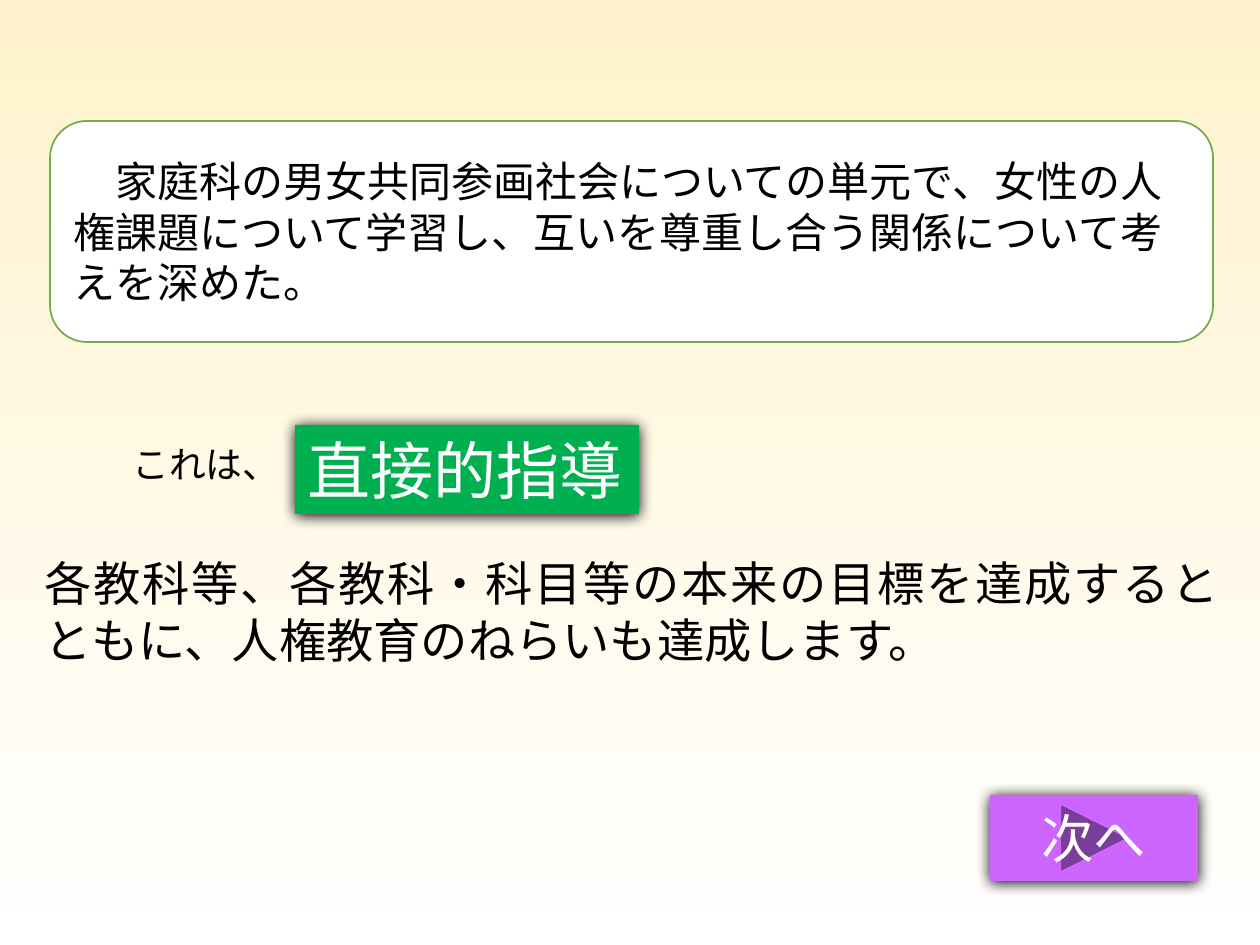
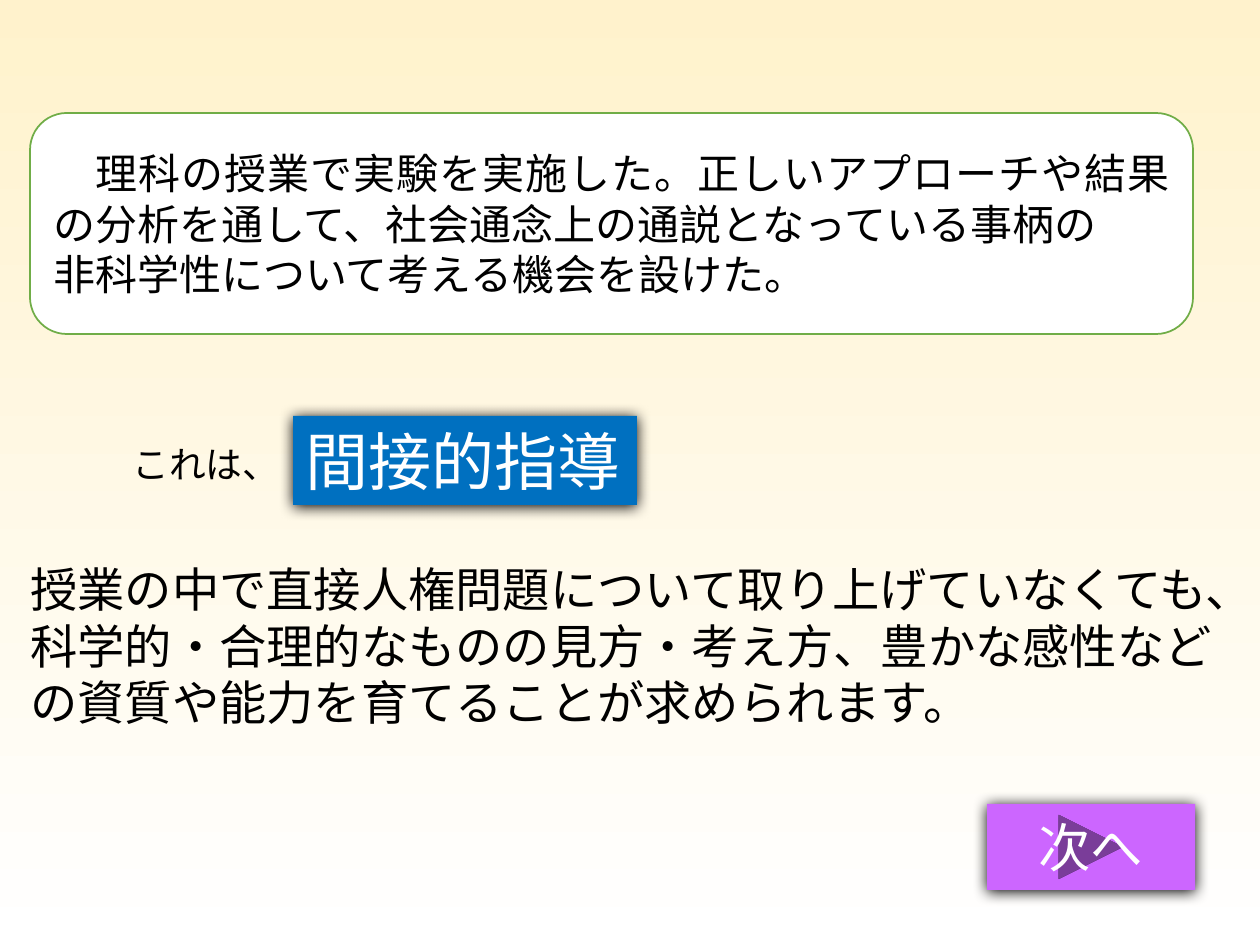
from lxml import etree
from pptx import Presentation
from pptx.dml.color import RGBColor
from pptx.enum.shapes import MSO_SHAPE
from pptx.enum.text import MSO_ANCHOR, MSO_AUTO_SIZE, PP_ALIGN
from pptx.oxml.ns import qn
from pptx.util import Pt

SCALE = 914400 / 126
FACE = "Noto Sans CJK JP"
SKY = ("FFF2CC", "FFFFFF")
BLACK, WHITE = "000000", "FFFFFF"
PURPLE, GREEN, BLUE, LEAF = "CC66FF", "00B050", "0070C0", "70AD47"
NEXT = MSO_SHAPE.ACTION_BUTTON_FORWARD_OR_NEXT
RECT, ROUND = MSO_SHAPE.RECTANGLE, MSO_SHAPE.ROUNDED_RECTANGLE
LEFT, CENTER, JUST = PP_ALIGN.LEFT, PP_ALIGN.CENTER, PP_ALIGN.JUSTIFY
TOP, MIDDLE = MSO_ANCHOR.TOP, MSO_ANCHOR.MIDDLE
GROW, FIXED = MSO_AUTO_SIZE.SHAPE_TO_FIT_TEXT, MSO_AUTO_SIZE.NONE

CASES = [
    {
        "card": (50, 121, 1163, 221),
        "story": [("家庭科の男女共同参画社会についての単元で、女性の人権課題について学習し、"
                   "互いを尊重し合う関係について考えを深めた。", LEFT)],
        "label": (295, 425, 344, 89),
        "answer": "直接的指導",
        "color": GREEN,
        "body": (32, 548, 1200, 127),
        "reason": ["各教科等、各教科・科目等の本来の目標を達成するとともに、"
                   "人権教育のねらいも達成します。"],
        "wrap": True,
        "button": (990, 795, 208, 86),
    },
    {
        "card": (30, 113, 1163, 221),
        "story": [("理科の授業で実験を実施した。正しいアプローチや結果の分析を通して、"
                   "社会通念上の通説となっている事柄の", JUST),
                  ("非科学性について考える機会を設けた。", LEFT)],
        "label": (293, 416, 344, 89),
        "answer": "間接的指導",
        "color": BLUE,
        "body": (18, 554, 1266, 184),
        "reason": ["授業の中で直接人権問題について取り上げていなくても、",
                   "科学的・合理的なものの見方・考え方、豊かな感性など",
                   "の資質や能力を育てることが求められます。"],
        "wrap": False,
        "button": (987, 804, 208, 86),
    },
]


def px(num):
    """Turn px into EMU."""
    return round(num * SCALE)


def rgb(code):
    """Turn a hex string into a colour."""
    return RGBColor.from_string(code)


def write(shape, lines, size, color, anchor=TOP, wrap=True, fit=FIXED):
    """Fill a shape with (text, alignment) lines in one style."""
    frame = shape.text_frame
    frame.text = "\n".join(text for text, _ in lines)
    frame.word_wrap = wrap
    frame.auto_size = fit
    frame.vertical_anchor = anchor
    for para, (_, align) in zip(frame.paragraphs, lines):
        para.alignment = align
        for run in para.runs:
            font = run.font
            font.size = Pt(size)
            font.name = FACE
            font.color.rgb = rgb(color)
            props = run._r.get_or_add_rPr()
            etree.SubElement(props, qn("a:ea"), typeface=FACE)


def draw(slide, kind, box, fill, line=None):
    """Add a flat preset shape."""
    shape = slide.shapes.add_shape(kind, *map(px, box))
    shape.shadow.inherit = False
    shape.fill.solid()
    shape.fill.fore_color.rgb = rgb(fill)
    if line:
        shape.line.color.rgb = rgb(line)
        shape.line.width = Pt(1)
    else:
        shape.line.fill.background()
    return shape


def shade(shape):
    """Give a shape a soft black shadow below it."""
    effects = shape._element.spPr.find(qn("a:effectLst"))
    outer = etree.SubElement(
        effects, qn("a:outerShdw"), blurRad=str(Pt(8.5)), dist=str(Pt(1)),
        dir="5400000", algn="ctr", rotWithShape="0")
    etree.SubElement(outer, qn("a:srgbClr"), val=BLACK)


def button(slide, box):
    """Add the button that leads on."""
    shape = draw(slide, NEXT, box, PURPLE)
    shade(shape)
    write(shape, [("次へ", CENTER)], 30, WHITE, MIDDLE)


def phrase(slide, box):
    """Add the sentence that frames the answer, with a tab as its gap."""
    shape = slide.shapes.add_textbox(*map(px, box))
    props = shape.text_frame.paragraphs[0]._p.get_or_add_pPr()
    tabs = etree.SubElement(props, qn("a:tabLst"))
    etree.SubElement(tabs, qn("a:tab"), pos=str(px(551)), algn="l")
    write(shape, [("これは、\tです。", LEFT)], 21, BLACK, fit=GROW)


def body(slide, box, lines, wrap):
    """Add the reason for the answer."""
    shape = slide.shapes.add_textbox(*map(px, box))
    write(shape, [(text, JUST) for text in lines], 27, BLACK, wrap=wrap, fit=GROW)


def label(slide, box, text, color):
    """Add the answer on its coloured plate."""
    shape = draw(slide, RECT, box, color)
    shade(shape)
    write(shape, [(text, LEFT)], 36, WHITE, wrap=False, fit=GROW)


def card(slide, box, lines):
    """Add the rounded card that tells the case."""
    shape = draw(slide, ROUND, box, WHITE, LEAF)
    write(shape, lines, 24, BLACK, MIDDLE)
    props = shape.text_frame.paragraphs[0]._p.get_or_add_pPr()
    props.set("marL", "0")
    props.set("indent", str(Pt(24)))


def page(deck, case):
    """Add one answer slide."""
    slide = deck.slides.add_slide(deck.slide_layouts[6])
    fill = slide.background.fill
    fill.gradient()
    fill.gradient_angle = 270
    for stop, code in zip(fill.gradient_stops, SKY):
        stop.color.rgb = rgb(code)
    button(slide, case["button"])
    phrase(slide, (120, 436, 693, 57))
    body(slide, case["body"], case["reason"], case["wrap"])
    label(slide, case["label"], case["answer"], case["color"])
    card(slide, case["card"], case["story"])


def main():
    """Build and save the deck."""
    deck = Presentation()
    deck.slide_width, deck.slide_height = px(1260), px(945)
    for case in CASES:
        page(deck, case)
    deck.save("out.pptx")


if __name__ == "__main__":
    main()
